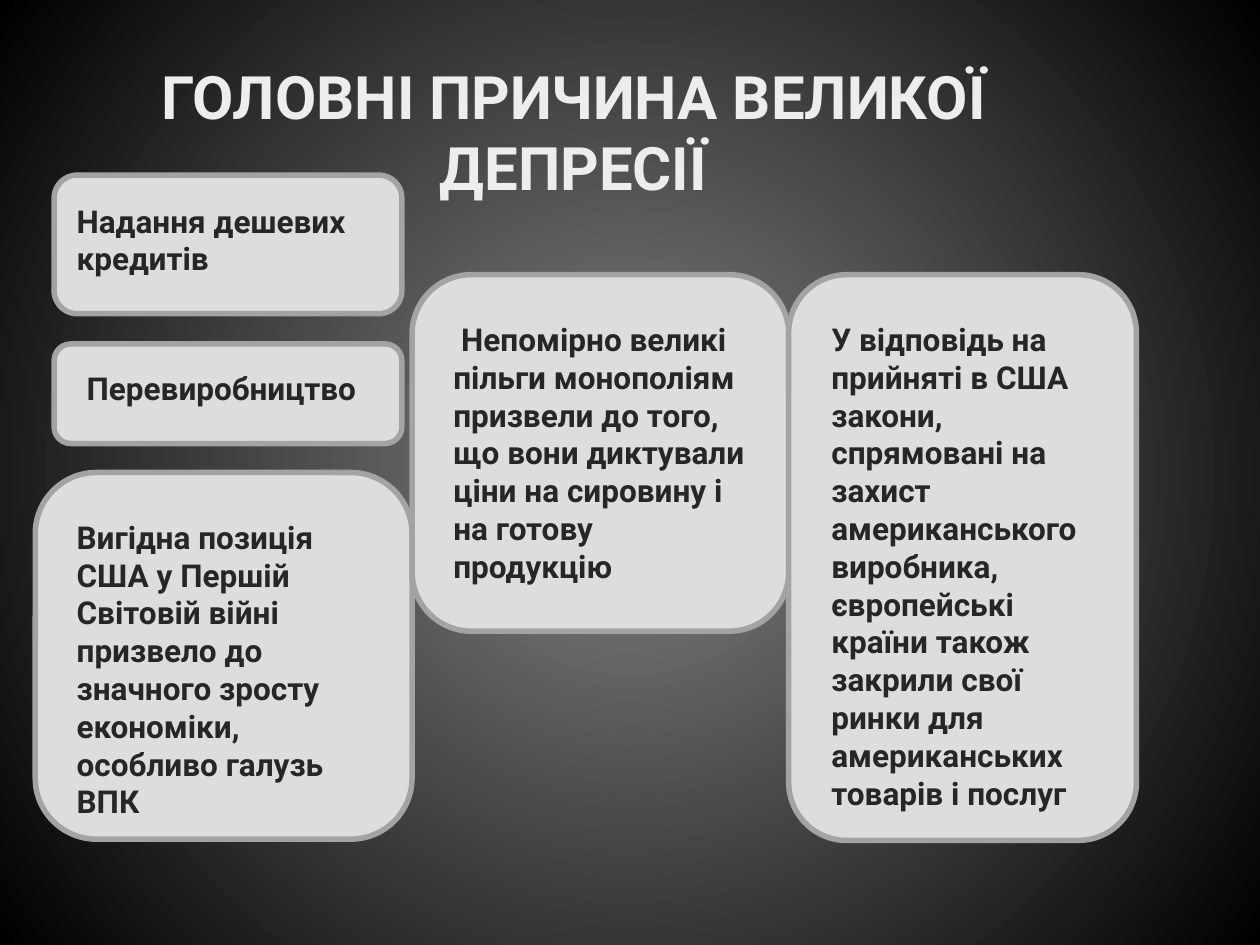
from dataclasses import dataclass

from pptx import Presentation
from pptx.dml.color import RGBColor
from pptx.enum.shapes import MSO_SHAPE
from pptx.enum.text import MSO_ANCHOR, MSO_AUTO_SIZE, PP_ALIGN
from pptx.oxml import parse_xml
from pptx.oxml.ns import nsdecls, qn
from pptx.util import Inches, Pt


@dataclass(frozen=True)
class Theme:
    font: str = "Roboto"
    title_size: float = 34.2
    body_size: float = 18
    line_width: float = 3.15
    title: str = "EDEDED"
    text: str = "262626"
    card: str = "DDDDDD"
    border: str = "A3A3A3"
    glow: str = "848484"
    edge: str = "000000"


@dataclass(frozen=True)
class Area:
    """A place on a grid of 100 columns by 75 rows."""
    column: float
    row: float
    columns: float
    rows: float

    def lengths(self) -> list[int]:
        return [round(cells * CELL)
                for cells in (self.column, self.row, self.columns, self.rows)]


@dataclass(frozen=True)
class Cause:
    card: Area
    label: Area
    text: str


THEME = Theme()
WIDTH, HEIGHT = Inches(10), Inches(7.5)
CELL = WIDTH / 100

TITLE = "ГОЛОВНІ ПРИЧИНА ВЕЛИКОЇ ДЕПРЕСІЇ"
TITLE_AREA = Area(5.9, 3.6, 79.2, 12.5)

CAUSES = [
    Cause(Area(4.3, 27.3, 27.6, 7.9), Area(5.9, 28.8, 26, 4),
          "Перевиробництво"),
    Cause(Area(4.3, 13.9, 27.6, 11), Area(5.1, 15.5, 24.4, 7.1),
          "Надання дешевих кредитів"),
    Cause(Area(2.8, 37.5, 29.9, 29.1), Area(5.1, 40.6, 25.2, 25.2),
          "Вигідна позиція США у Першій Світовій війні призвело до значного "
          "зросту економіки, особливо галузь ВПК"),
    Cause(Area(32.7, 21.8, 29.9, 28.3), Area(35, 24.9, 26, 22.2),
          " Непомірно великі пільги монополіям призвели до того, що вони "
          "диктували ціни на сировину і на готову продукцію"),
    Cause(Area(62.6, 21.8, 27.6, 44.9), Area(65, 24.9, 23.6, 40.4),
          "У відповідь на прийняті в США закони, спрямовані на захист "
          "американського виробника, європейські країни також закрили свої "
          "ринки для американських товарів і послуг"),
]


def color(value: str) -> RGBColor:
    return RGBColor.from_string(value)


def paint_background(page) -> None:
    """Radial gradient from the centre of the slide outwards."""
    page.element.find(qn("p:cSld")).insert(0, parse_xml(
        f'<p:bg {nsdecls("p", "a")}><p:bgPr><a:gradFill rotWithShape="1"><a:gsLst>'
        f'<a:gs pos="0"><a:srgbClr val="{THEME.glow}"/></a:gs>'
        f'<a:gs pos="100000"><a:srgbClr val="{THEME.edge}"/></a:gs></a:gsLst>'
        '<a:path path="circle"><a:fillToRect l="50000" t="50000" r="50000" b="50000"/>'
        '</a:path></a:gradFill><a:effectLst/></p:bgPr></p:bg>'))


def write(frame, text: str, size: float, ink: str) -> None:
    frame.text = text
    frame.word_wrap = True
    for span in frame.paragraphs[0].runs:
        span.font.name = THEME.font
        span.font.size = Pt(size)
        span.font.bold = True
        span.font.color.rgb = color(ink)


def add_title(page) -> None:
    title = page.shapes.title
    title.left, title.top, title.width, title.height = TITLE_AREA.lengths()
    frame = title.text_frame
    write(frame, TITLE, THEME.title_size, THEME.title)
    frame.auto_size = MSO_AUTO_SIZE.NONE
    frame.vertical_anchor = MSO_ANCHOR.BOTTOM
    frame.margin_left = frame.margin_right = Inches(0.05)
    frame.margin_top = frame.margin_bottom = 0
    frame.paragraphs[0].alignment = PP_ALIGN.CENTER
    frame.paragraphs[0].line_spacing = 1.0


def add_cause(page, cause: Cause) -> None:
    card = page.shapes.add_shape(MSO_SHAPE.ROUNDED_RECTANGLE, *cause.card.lengths())
    card.shadow.inherit = False
    card.fill.solid()
    card.fill.fore_color.rgb = color(THEME.card)
    card.line.color.rgb = color(THEME.border)
    card.line.width = Pt(THEME.line_width)

    label = page.shapes.add_textbox(*cause.label.lengths())
    write(label.text_frame, cause.text, THEME.body_size, THEME.text)
    label.text_frame.auto_size = MSO_AUTO_SIZE.SHAPE_TO_FIT_TEXT


def main() -> None:
    deck = Presentation()
    deck.slide_width, deck.slide_height = WIDTH, HEIGHT
    page = deck.slides.add_slide(deck.slide_layouts.get_by_name("Title Only"))
    paint_background(page)
    add_title(page)
    for cause in CAUSES:
        add_cause(page, cause)
    deck.save("out.pptx")


if __name__ == "__main__":
    main()
